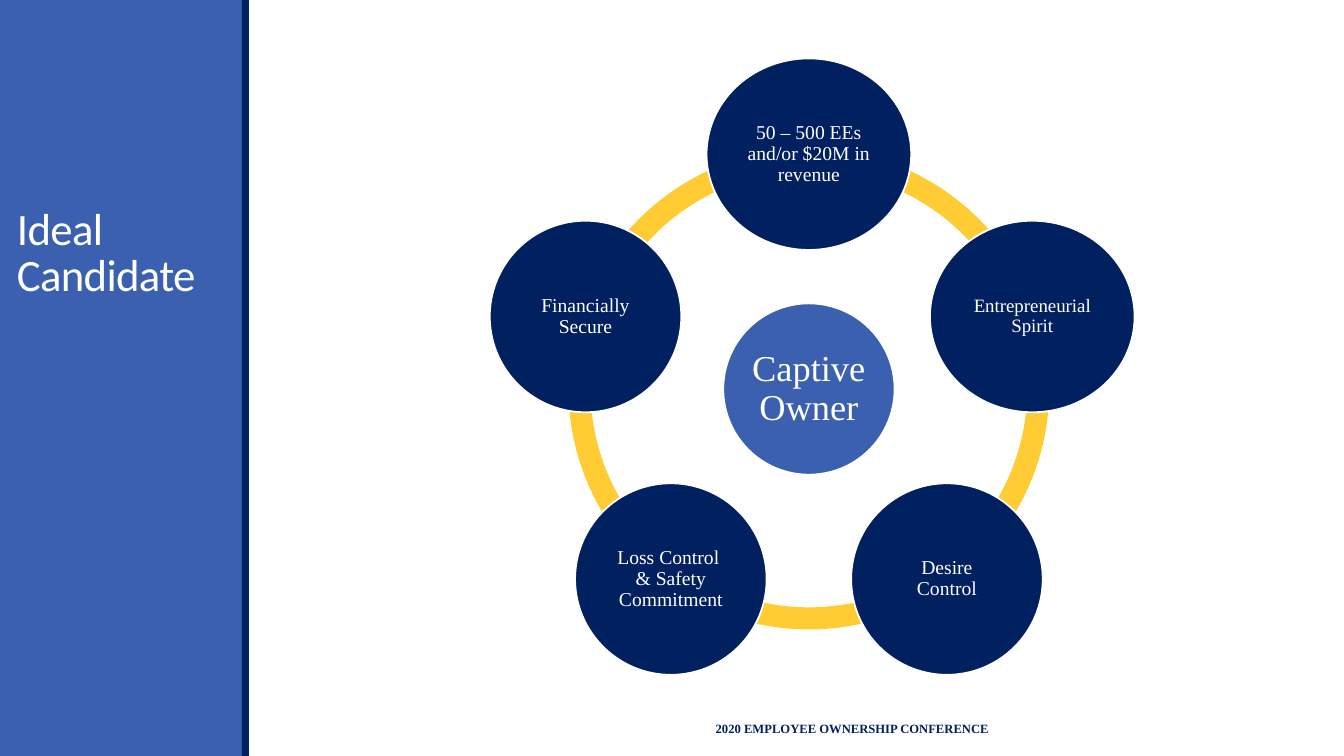
from math import cos, radians, sin

from pptx import Presentation
from pptx.dml.color import RGBColor
from pptx.enum.shapes import MSO_SHAPE
from pptx.enum.text import MSO_ANCHOR, PP_ALIGN
from pptx.util import Inches, Pt

COLORS = {"blue": "3B60AF", "navy": "002060", "gold": "FFCC33", "white": "FFFFFF"}

# Grid of square cells, ten to the inch
CELL = Inches(0.1)
COLUMNS, ROWS = 133.33, 75

presentation = Presentation()
presentation.slide_width = int(COLUMNS * CELL)
presentation.slide_height = ROWS * CELL
slide = presentation.slides.add_slide(presentation.slide_layouts[6])


def add_shape(kind, left, top, width, height, fill=None, outline=None):
    """Add a preset shape, placed in grid cells."""
    box = [int(length * CELL) for length in (left, top, width, height)]
    shape = slide.shapes.add_shape(kind, *box)
    shape.shadow.inherit = False
    if fill:
        shape.fill.solid()
        shape.fill.fore_color.rgb = RGBColor.from_string(COLORS[fill])
    else:
        shape.fill.background()
    if outline:
        shape.line.color.rgb = RGBColor.from_string(COLORS[outline])
        shape.line.width = Pt(1.25)
    else:
        shape.line.fill.background()
    return shape


def write(shape, text, color, font, frame, spacing, align=PP_ALIGN.CENTER):
    """Fill a shape with one paragraph of formatted text."""
    text_frame = shape.text_frame
    text_frame.word_wrap = True
    for name, value in frame.items():
        setattr(text_frame, name, value)
    paragraph = text_frame.paragraphs[0]
    paragraph.text = text
    paragraph.alignment = align
    paragraph.line_spacing = spacing
    for run in paragraph.runs:
        run.font.color.rgb = RGBColor.from_string(COLORS[color])
        for name, value in font.items():
            setattr(run.font, name, value)
    return paragraph


# Side panel with its edge stripe
add_shape(MSO_SHAPE.RECTANGLE, 0, 0, 24.7, ROWS, "blue")
add_shape(MSO_SHAPE.RECTANGLE, 24, 0, 0.7, ROWS, "navy")

# Title
title = add_shape(MSO_SHAPE.RECTANGLE, 0.7, 5.3, 24, 25)
title_paragraph = write(
    title, "Ideal Candidate", "white", {"name": "Calibri", "size": Pt(32)},
    {"vertical_anchor": MSO_ANCHOR.BOTTOM}, 0.85, PP_ALIGN.LEFT)
for run in title_paragraph.runs:
    run.font._element.set("spc", "-50")

# Footer
footer = add_shape(MSO_SHAPE.RECTANGLE, 59.7, 70.3, 50.8, 4)
write(footer, "2020 EMPLOYEE OWNERSHIP CONFERENCE", "navy",
      {"name": "Times New Roman", "size": Pt(9), "bold": True},
      {"margin_left": int(11.3 * CELL), "vertical_anchor": MSO_ANCHOR.MIDDLE},
      1.0, PP_ALIGN.LEFT)

# Ring of arcs around a common centre
CENTER_X, CENTER_Y = 80.25, 38.6
RING = 47.7
cuts = [32.4 + 43.2 * index for index in range(5)]
for start, end in zip(cuts, cuts[1:] + cuts[:1]):
    arc = add_shape(MSO_SHAPE.BLOCK_ARC, CENTER_X - RING / 2,
                    CENTER_Y - RING / 2, RING, RING, "gold")
    # Angles are stored in 60000ths of a degree, adjustments in 100000ths
    for index, value in enumerate((start * 0.6, end * 0.6, 0.046)):
        arc.adjustments[index] = value

# Five nodes clockwise from the top: text, width, font size
ORBIT = 23.3
NODES = [
    ("50 – 500 EEs and/or $20M in revenue", 20.3, 14),
    ("Entrepreneurial Spirit", 20.3, 13.5),
    ("Desire\vControl", 19, 14),
    ("Loss Control \v& Safety\vCommitment", 19, 14),
    ("Financially Secure", 19, 14),
]

# Hub first, then the nodes: text, centre, size, fill, font size
circles = [("Captive Owner", CENTER_X, CENTER_Y, 17, 17, "blue", 26)]
for index, (text, width, size) in enumerate(NODES):
    angle = radians(index * 360 / len(NODES) - 90)
    circles.append((text, CENTER_X + ORBIT * cos(angle),
                    CENTER_Y + ORBIT * sin(angle), width, 19, "navy", size))

# Narrow insets keep the longest word of each label on one line
circle_frame = {f"margin_{side}": Inches(0.01)
                for side in ("left", "top", "right", "bottom")}
circle_frame["vertical_anchor"] = MSO_ANCHOR.MIDDLE
for text, x, y, width, height, fill, size in circles:
    circle = add_shape(MSO_SHAPE.OVAL, x - width / 2, y - height / 2,
                       width, height, fill, "white")
    write(circle, text, "white",
          {"name": "Times New Roman", "size": Pt(size)}, circle_frame, 0.9)

presentation.save("out.pptx")
